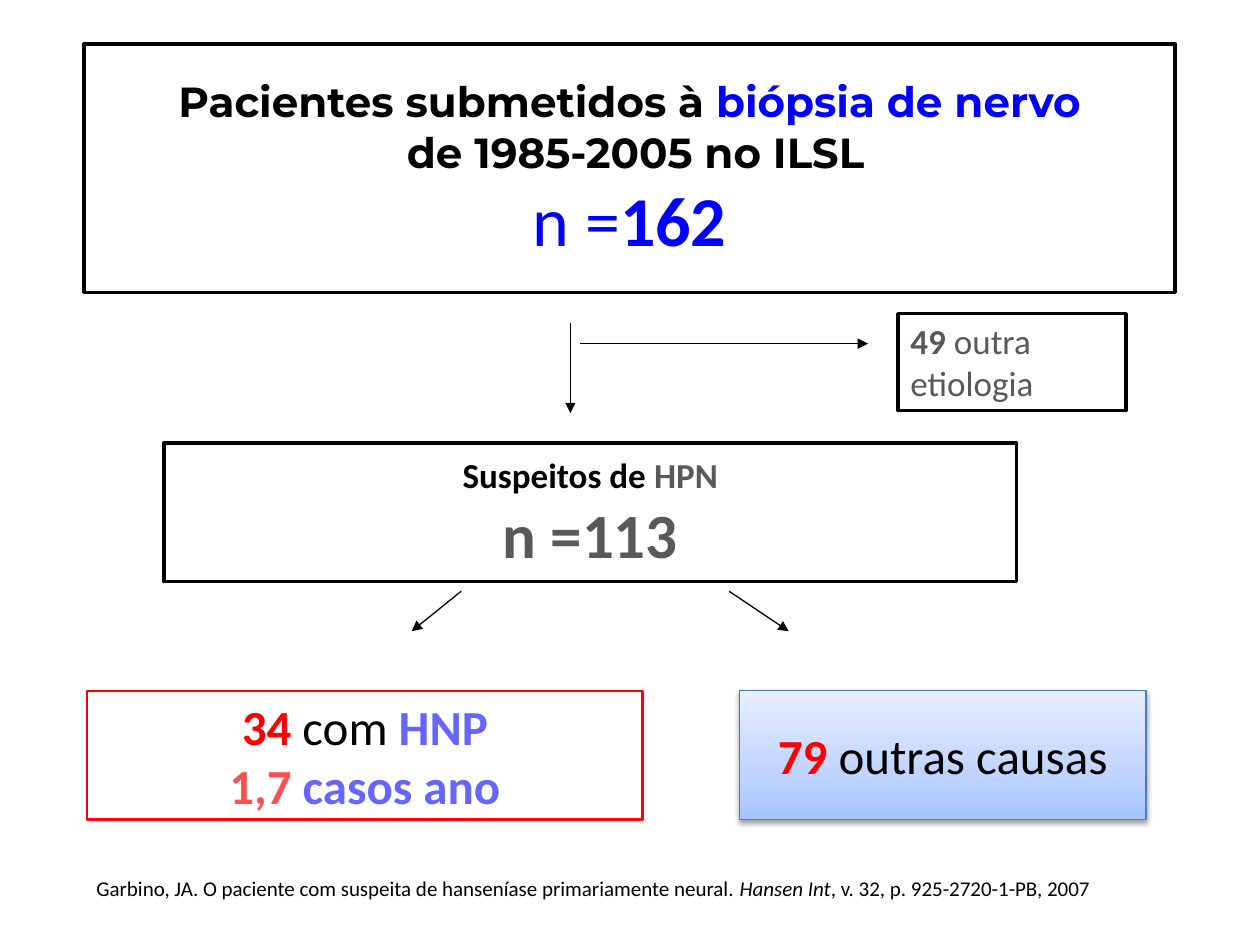
from copy import deepcopy

from lxml.etree import SubElement
from pptx import Presentation
from pptx.dml.color import RGBColor
from pptx.enum.shapes import MSO_CONNECTOR as Connector, MSO_SHAPE as Shape
from pptx.enum.text import MSO_ANCHOR as Anchor, MSO_AUTO_SIZE as AutoSize, PP_ALIGN as Align
from pptx.oxml.ns import qn
from pptx.util import Inches, Pt

BLACK = RGBColor(0x00, 0x00, 0x00)
WHITE = RGBColor(0xFF, 0xFF, 0xFF)
BLUE = RGBColor(0x00, 0x00, 0xFF)
GRAY = RGBColor(0x59, 0x59, 0x59)
RED = RGBColor(0xFF, 0x00, 0x00)
CORAL = RGBColor(0xFF, 0x50, 0x50)
VIOLET = RGBColor(0x66, 0x66, 0xFF)
STEEL = RGBColor(0x4B, 0x7E, 0xBC)
SKY_DEEP = RGBColor(0xA4, 0xC4, 0xFF)
SKY_MID = RGBColor(0xBF, 0xD4, 0xFF)
SKY_PALE = RGBColor(0xE6, 0xEE, 0xFF)

deck = Presentation()
deck.slide_width, deck.slide_height = Inches(10), Inches(7.5)
page = deck.slides.add_slide(deck.slide_layouts[6])

# Positions are percentages of the slide's width and height.
COL, ROW = deck.slide_width / 100, deck.slide_height / 100


def grid(x, y):
    return round(x * COL), round(y * ROW)


def write(frame, paragraphs, align):
    """Fill a frame with paragraphs of (text, size, colour, style, font) runs."""
    for index, runs in enumerate(paragraphs):
        para = frame.paragraphs[0] if index == 0 else frame.add_paragraph()
        para.alignment = align
        for text, size, color, style, font in runs:
            span = para.add_run()
            span.text = text
            span.font.size = Pt(size)
            span.font.name = font
            span.font.bold = "b" in style
            span.font.italic = "i" in style
            span.font.color.rgb = color


TITLE_FONT, BODY_FONT = "Montserrat", "Calibri"
LOWER_TOP, LOWER_HEIGHT = 73.1, 13.6

# left, top, width, height, line colour, line width, alignment, paragraphs
boxes = {
    "biopsies": (6.67, 4.67, 86.6, 26.27, BLACK, 2, Align.CENTER, [
        [("Pacientes submetidos à ", 24, BLACK, "b", TITLE_FONT),
         ("biópsia de nervo", 24, BLUE, "b", TITLE_FONT)],
        [(" de 1985-2005 no ILSL", 24, BLACK, "b", TITLE_FONT)],
        [("n =", 40, BLUE, "", BODY_FONT), ("162", 40, BLUE, "b", BODY_FONT)],
    ]),
    "suspects": (13, 46.87, 67.7, 14.67, BLACK, 2, Align.CENTER, [
        [("Suspeitos de ", 20, BLACK, "b", BODY_FONT), ("HPN", 20, GRAY, "b", BODY_FONT)],
        [("n =113", 36, GRAY, "b", BODY_FONT)],
    ]),
    "confirmed": (6.9, LOWER_TOP, 44.1, LOWER_HEIGHT, RED, 1.5, Align.CENTER, [
        [("34 ", 28, RED, "b", BODY_FONT), ("com ", 28, BLACK, "", BODY_FONT),
         ("HNP", 28, VIOLET, "b", BODY_FONT)],
        [("1,7 ", 28, CORAL, "b", BODY_FONT), ("casos ano", 28, VIOLET, "b", BODY_FONT)],
    ]),
    "other causes": (58.67, LOWER_TOP, 32.3, LOWER_HEIGHT, STEEL, 0.75, Align.CENTER, [
        [("79 ", 28, RED, "b", BODY_FONT), ("outras causas", 28, BLACK, "", BODY_FONT)],
    ]),
    "other etiology": (71.27, 33.2, 18.1, 10.27, BLACK, 2, Align.LEFT, [
        [("49 ", 20, GRAY, "b", BODY_FONT), ("outra etiologia", 20, GRAY, "", BODY_FONT)],
    ]),
}

drawn = {}
for name, (x, y, width, height, color, weight, align, paragraphs) in boxes.items():
    box = page.shapes.add_shape(Shape.RECTANGLE, *grid(x, y), *grid(width, height))
    box.shadow.inherit = False
    box.fill.solid()
    box.fill.fore_color.rgb = WHITE
    box.line.color.rgb = color
    box.line.width = Pt(weight)
    box.text_frame.word_wrap = align == Align.LEFT
    box.text_frame.vertical_anchor = Anchor.TOP if align == Align.LEFT else Anchor.MIDDLE
    write(box.text_frame, paragraphs, align)
    drawn[name] = box

# The "other causes" box has a three-stop gradient and a soft shadow.
causes = drawn["other causes"]
causes.fill.gradient()
causes.fill.gradient_angle = 90
stop_list = causes.fill._fill._gradFill.find(qn("a:gsLst"))
stop_list.insert(1, deepcopy(stop_list[0]))
for stop, position, color in zip(causes.fill.gradient_stops, (0, 0.35, 1),
                                 (SKY_DEEP, SKY_MID, SKY_PALE)):
    stop.position = position
    stop.color.rgb = color
effects = causes._element.spPr.find(qn("a:effectLst"))
shadow = SubElement(effects, qn("a:outerShdw"), blurRad=str(Pt(3.1)), dist=str(Pt(1.6)),
                    dir="5400000", rotWithShape="0")
shadow_color = SubElement(shadow, qn("a:srgbClr"), val=str(BLACK))
SubElement(shadow_color, qn("a:alpha"), val="38000")

arrows = [
    ((45.27, 34.23), (45.27, 43.73)),
    ((46.07, 36.37), (68.9, 36.37)),
    ((36.6, 62.57), (32.67, 66.8)),
    ((57.87, 62.57), (62.6, 66.8)),
]
for start, end in arrows:
    arrow = page.shapes.add_connector(Connector.STRAIGHT, *grid(*start), *grid(*end))
    arrow.line.color.rgb = BLACK
    arrow.line.width = Pt(0.75)
    SubElement(arrow.line._get_or_add_ln(), qn("a:tailEnd"), type="triangle")
    SubElement(arrow._element.spPr, qn("a:effectLst"))

citation = page.shapes.add_textbox(*grid(6.67, 92), *grid(85.8, 4))
citation.text_frame.word_wrap = True
citation.text_frame.auto_size = AutoSize.SHAPE_TO_FIT_TEXT
write(citation.text_frame, [[
    ("Garbino, JA. O paciente com suspeita de hanseníase primariamente neural. ",
     12, BLACK, "", BODY_FONT),
    ("Hansen Int", 12, BLACK, "i", BODY_FONT),
    (", v. 32, p. 925-2720-1-PB, 2007", 12, BLACK, "", BODY_FONT),
]], Align.LEFT)

deck.save("out.pptx")
